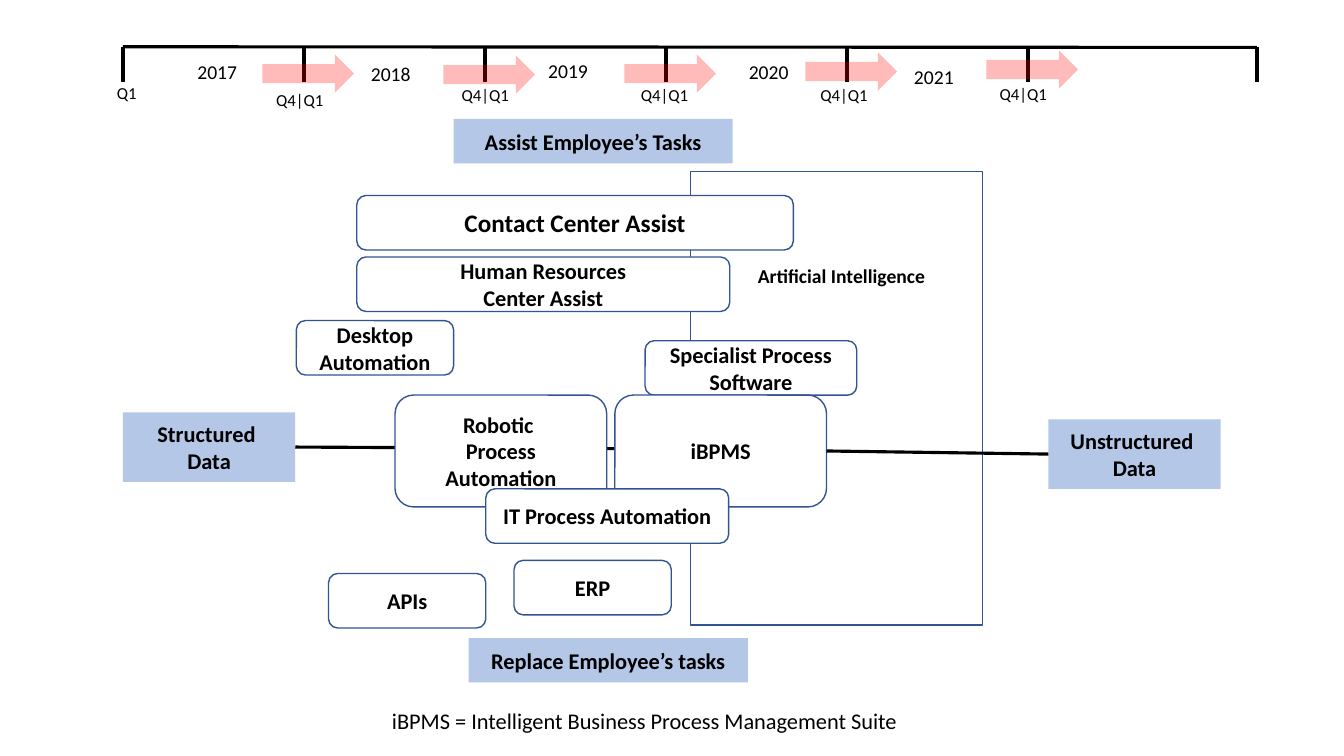
"""Build a slide mapping automation technologies along a 2017-2021 timeline."""
from dataclasses import dataclass

from lxml.etree import SubElement
from pptx import Presentation
from pptx.dml.color import RGBColor as RGB
from pptx.enum.shapes import MSO_CONNECTOR as Line, MSO_SHAPE as Shape
from pptx.enum.text import MSO_ANCHOR as Anchor, MSO_AUTO_SIZE as AutoSize, PP_ALIGN as Align
from pptx.oxml.ns import qn
from pptx.util import Pt


@dataclass(frozen=True)
class Theme:
    font: str = "Calibri"
    black: RGB = RGB(0, 0, 0)
    white: RGB = RGB(255, 255, 255)
    outline: RGB = RGB(0x32, 0x54, 0x91)
    band: RGB = RGB(0xB4, 0xC7, 0xE7)
    arrow: RGB = RGB(255, 0, 0)
    arrow_alpha: int = 27000
    large: int = 18
    body: int = 16
    year: int = 14
    quarter: int = 12


THEME = Theme()

ENDS = [
    ("Assist Employee’s Tasks", 324, 85, 199.4, 31.7),
    ("Structured \nData", 87.8, 294.5, 123.1, 49.7),
    ("Replace Employee’s tasks", 334.8, 455.8, 199.4, 31.7),
    ("Unstructured \nData", 748.8, 299.5, 123.1, 49.7),
]
AI_AREA = (493.2, 122.4, 208.8, 324)
AI_LABEL = ("Artificial Intelligence", 534.2, 185, 135.4, 24.5)
LOW, TALL = 38.9, 79.9
TECHNOLOGIES = [
    ("Contact Center Assist", 254.9, 139.7, 311.8, LOW),
    ("Human Resources\nCenter Assist", 254.9, 183.6, 266.4, LOW),
    ("Desktop\nAutomation", 211.7, 229, 112.3, LOW),
    ("Specialist Process\nSoftware", 460.8, 243.4, 151.2, LOW),
    ("Robotic \nProcess\nAutomation", 282.2, 282.2, 151.2, TALL),
    ("iBPMS", 439.2, 282.2, 151.2, TALL),
    ("IT Process Automation", 347, 349.2, 173.5, LOW),
    ("APIs", 234.7, 409.7, 112.3, LOW),
    ("ERP", 367.2, 400.3, 112.3, LOW),
]
LARGE_NAMES = {"Contact Center Assist"}
CAPTION = ("iBPMS = Intelligent Business Process Management Suite", 272.9, 501.8, 385.9, 26.6)

YEARS = [("2017", 133.9, 39.6), ("2018", 257.8, 41), ("2019", 384.5, 38.9),
         ("2020", 527.8, 39.6), ("2021", 645.8, 42.5)]
QUARTERS = [("Q1", 76.3, 55.4, 35.3), ("Q4|Q1", 190.1, 60.5, 51.8),
            ("Q4|Q1", 322.6, 56.9, 51.8), ("Q4|Q1", 450.7, 56.9, 51.8),
            ("Q4|Q1", 578.9, 56.9, 51.8), ("Q4|Q1", 707, 56.2, 51.8)]
ARROW_TOPS = [38.9, 39.6, 38.9, 37.4, 36]
AXIS_LEFT, AXIS_RIGHT, AXIS_TOP = 87.8, 897.8, 33.4
TICK_GAP, TICK_LENGTH, ARROW_LEAD = 129.3, 25.2, 29.7


def write(frame, text, size, bold=False, align=Align.LEFT):
    frame.text = text
    for paragraph in frame.paragraphs:
        paragraph.alignment = align
        font = paragraph.font
        font.name, font.size, font.bold = THEME.font, Pt(size), bold
        font.color.rgb = THEME.black


def add_block(slide, kind, box, fill, outline=None):
    block = slide.shapes.add_shape(kind, *map(Pt, box))
    block.shadow.inherit = False
    block.fill.solid()
    block.fill.fore_color.rgb = fill
    if outline is None:
        block.line.fill.background()
    else:
        block.line.color.rgb, block.line.width = outline, Pt(1)
    return block


def add_named_block(slide, kind, entry, fill, outline=None):
    name, *box = entry
    block = add_block(slide, kind, box, fill, outline)
    block.text_frame.vertical_anchor = Anchor.MIDDLE
    size = THEME.large if name in LARGE_NAMES else THEME.body
    write(block.text_frame, name, size, True, Align.CENTER)
    return block


def add_label(slide, entry, size, bold=False, wrap=False):
    text, *box = entry
    frame = slide.shapes.add_textbox(*map(Pt, box)).text_frame
    frame.word_wrap, frame.auto_size = wrap, AutoSize.SHAPE_TO_FIT_TEXT
    write(frame, text, size, bold)


def add_line(slide, x1, y1, x2, y2, width=2.25):
    line = slide.shapes.add_connector(Line.STRAIGHT, *map(Pt, (x1, y1, x2, y2)))
    line.line.color.rgb, line.line.width = THEME.black, Pt(width)
    SubElement(line._element.spPr, qn("a:effectLst"))
    return line


def draw_map(slide):
    ends = {entry[0]: add_named_block(slide, Shape.RECTANGLE, entry, THEME.band)
            for entry in ENDS}
    structured_line = add_line(slide, 211, 319, 702, 321.8)
    structured_line.begin_connect(ends["Structured \nData"], 3)
    add_block(slide, Shape.RECTANGLE, AI_AREA, THEME.white, THEME.outline)
    technologies = {
        entry[0]: add_named_block(slide, Shape.ROUNDED_RECTANGLE, entry,
                                  THEME.white, THEME.outline)
        for entry in TECHNOLOGIES}
    add_label(slide, AI_LABEL, THEME.year, bold=True)
    unstructured_line = add_line(slide, 590.4, 322.2, 748.8, 324.4)
    unstructured_line.begin_connect(technologies["iBPMS"], 3)
    unstructured_line.end_connect(ends["Unstructured \nData"], 1)
    add_label(slide, CAPTION, THEME.body)


def draw_timeline(slide):
    add_line(slide, AXIS_LEFT, AXIS_TOP, AXIS_RIGHT, AXIS_TOP + 0.5)
    ticks = [AXIS_LEFT + TICK_GAP * i for i in range(len(QUARTERS))]
    for x in ticks + [AXIS_RIGHT]:
        add_line(slide, x, AXIS_TOP, x, AXIS_TOP + TICK_LENGTH, 3)
    for year, left, top in YEARS:
        add_label(slide, (year, left, top, 43.2, 24.5), THEME.year)
    for x, top in zip(ticks[1:], ARROW_TOPS):
        arrow = add_block(slide, Shape.RIGHT_ARROW, (x - ARROW_LEAD, top, 65.5, 27.4),
                          THEME.arrow)
        color = arrow._element.spPr.find(qn("a:solidFill")).find(qn("a:srgbClr"))
        SubElement(color, qn("a:alpha"), val=str(THEME.arrow_alpha))
    for quarter, left, top, width in QUARTERS:
        add_label(slide, (quarter, left, top, width, 21.6), THEME.quarter, wrap=True)


def main():
    deck = Presentation()
    deck.slide_width, deck.slide_height = Pt(960), Pt(540)
    slide = deck.slides.add_slide(deck.slide_layouts[6])
    draw_map(slide)
    draw_timeline(slide)
    deck.save("out.pptx")


if __name__ == "__main__":
    main()
